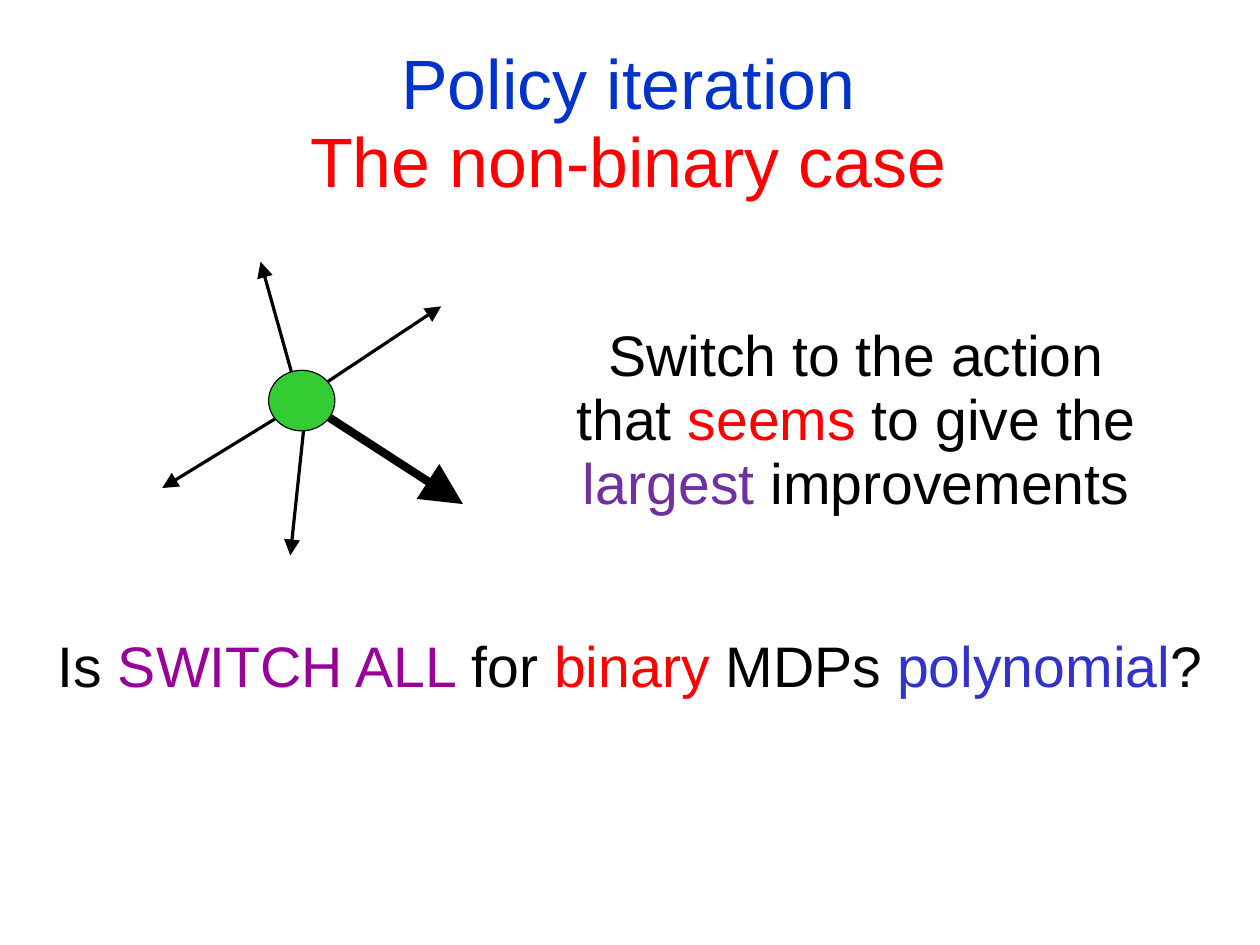
from dataclasses import dataclass

from lxml import etree
from pptx import Presentation
from pptx import util as u
from pptx.dml.color import RGBColor
from pptx.enum import shapes, text
from pptx.oxml import ns

CM_PER_INCH = 2.54


@dataclass(frozen=True)
class Theme:
    """Colours, font and sizes of the slide."""
    font: str = "Arial"
    title_size: float = 44
    body_size: float = 36
    line_spacing: float = 0.93
    thin: float = 2
    thick: float = 5.25
    outline: float = 0.75
    black: str = "000000"
    blue: str = "0033CC"
    red: str = "FF0000"
    green: str = "33CC33"
    violet: str = "7030A0"
    purple: str = "990099"
    indigo: str = "3333CC"


THEME = Theme()


def color(value):
    """Return a colour object for a hex value."""
    return RGBColor.from_string(value)


def add_text(slide, box, lines, size, inset=(0.1, 0.05)):
    """Place centred lines of (wording, colour) runs in the box."""
    text_box = slide.shapes.add_textbox(*map(u.Inches, box))
    frame = text_box.text_frame
    frame.word_wrap = True
    frame.margin_left = frame.margin_right = u.Inches(inset[0])
    frame.margin_top = frame.margin_bottom = u.Inches(inset[1])
    paragraph = frame.paragraphs[0]
    paragraph.alignment = text.PP_ALIGN.CENTER
    paragraph.line_spacing = THEME.line_spacing
    for number, line in enumerate(lines):
        if number:
            paragraph.add_line_break()
        for wording, tint in line:
            run = paragraph.add_run()
            run.text = wording
            run.font.name = THEME.font
            run.font.size = u.Pt(size)
            run.font.color.rgb = color(tint)
    return frame


def add_arrow(slide, start, end, width):
    """Draw a straight black arrow from start to end."""
    arrow = slide.shapes.add_connector(
        shapes.MSO_CONNECTOR.STRAIGHT, *map(u.Inches, (*start, *end)))
    arrow.line.color.rgb = color(THEME.black)
    arrow.line.width = u.Pt(width)
    properties = arrow._element.spPr
    line = properties.find(ns.qn("a:ln"))
    etree.SubElement(line, ns.qn("a:tailEnd"),
                     type="triangle", w="lg", len="lg")
    etree.SubElement(properties, ns.qn("a:effectLst"))


def add_title(slide, box):
    """Place the two-line title."""
    lines = [[("Policy iteration", THEME.blue)],
             [("The non-binary case", THEME.red)]]
    frame = add_text(slide, box, lines, THEME.title_size, (0, 0))
    frame.vertical_anchor = text.MSO_ANCHOR.MIDDLE


def add_state_diagram(slide, box):
    """Draw a state with its actions, the chosen one thick."""
    left, top, width, height = box
    actions = [
        ((1.22, 1.2), (2.44, 0.39), THEME.thin),
        ((1.24, 1.22), (width, 2.12), THEME.thick),
        ((1.19, 1.18), (0.86, 0), THEME.thin),
        ((1.19, 1.25), (0, 1.98), THEME.thin),
        ((1.26, 1.25), (1.12, height), THEME.thin),
    ]
    for start, end, weight in actions:
        add_arrow(slide, (left + start[0], top + start[1]),
                  (left + end[0], top + end[1]), weight)
    state_box = (left + 0.93, top + 0.95, 0.58, 0.53)
    state = slide.shapes.add_shape(
        shapes.MSO_SHAPE.OVAL, *map(u.Inches, state_box))
    state.shadow.inherit = False
    state.fill.solid()
    state.fill.fore_color.rgb = color(THEME.green)
    state.line.color.rgb = color(THEME.black)
    state.line.width = u.Pt(THEME.outline)


def add_rule(slide, box):
    """State the switching rule."""
    line = [("Switch to the action that ", THEME.black),
            ("seems", THEME.red),
            (" to give the ", THEME.black),
            ("largest", THEME.violet),
            (" improvements", THEME.black)]
    add_text(slide, box, [line], THEME.body_size)


def add_question(slide, box):
    """Ask the closing question."""
    line = [("Is ", THEME.black),
            ("SWITCH ALL ", THEME.purple),
            ("for ", THEME.black),
            ("binary", THEME.red),
            (" MDPs ", THEME.black),
            ("polynomial", THEME.indigo),
            ("?", THEME.black)]
    add_text(slide, box, [line], THEME.body_size)


def main():
    """Build and save the presentation."""
    presentation = Presentation()
    presentation.slide_width = u.Inches(28 / CM_PER_INCH)
    presentation.slide_height = u.Inches(21 / CM_PER_INCH)
    slide = presentation.slides.add_slide(presentation.slide_layouts[6])
    add_title(slide, (-0.01, 0.37, 11.02, 1.45))
    add_state_diagram(slide, (1.42, 2.29, 2.63, 2.57))
    add_rule(slide, (4.85, 2.8, 5.28, 1.79))
    add_question(slide, (0, 5.52, 11.02, 0.66))
    presentation.save("out.pptx")


if __name__ == "__main__":
    main()
